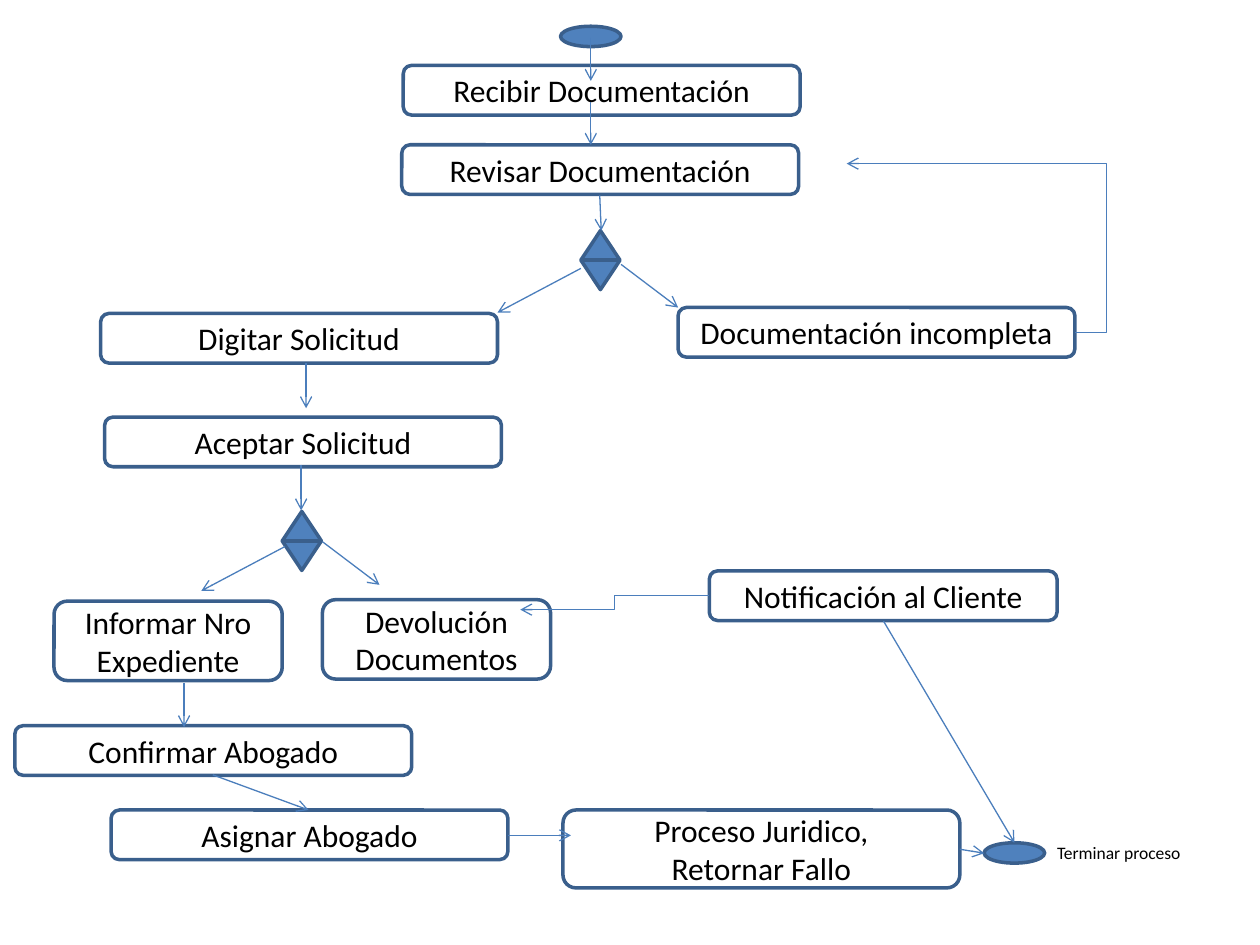
from dataclasses import dataclass

from lxml import etree
from pptx import Presentation
from pptx.dml.color import RGBColor
from pptx.enum.shapes import MSO_CONNECTOR, MSO_SHAPE
from pptx.enum.text import MSO_ANCHOR, PP_ALIGN
from pptx.oxml.ns import qn
from pptx.util import Cm, Pt

STEP = MSO_SHAPE.ROUNDED_RECTANGLE
DECISION = MSO_SHAPE.FLOWCHART_SORT
TERMINAL = MSO_SHAPE.OVAL
STRAIGHT = MSO_CONNECTOR.STRAIGHT
ELBOW = MSO_CONNECTOR.ELBOW
MIDDLE = MSO_ANCHOR.MIDDLE
TOP = MSO_ANCHOR.TOP
CENTER = PP_ALIGN.CENTER
LEFT = PP_ALIGN.LEFT


@dataclass(frozen=True)
class Theme:
    font: str = "Calibri"
    text: RGBColor = RGBColor(0x00, 0x00, 0x00)
    fill: RGBColor = RGBColor(0x4F, 0x81, 0xBD)
    outline: RGBColor = RGBColor(0x3A, 0x5F, 0x8C)
    flow: RGBColor = RGBColor(0x4B, 0x7E, 0xBC)
    step_size: Pt = Pt(18)
    caption_size: Pt = Pt(10)
    outline_width: Pt = Pt(2)
    flow_width: Pt = Pt(0.75)


THEME = Theme()

WIDE = (8, 1)
NARROW = (4.6, 1.6)
DIAMOND = (0.79, 1.19)
OVAL = (1.22, 0.41)

STEPS = [
    ("Recibir Documentación", (8.13, 1.32), WIDE),
    ("Revisar Documentación", (8.1, 2.92), WIDE),
    ("Digitar Solicitud", (2.03, 6.32), WIDE),
    ("Documentación incompleta", (13.67, 6.2), WIDE),
    ("Aceptar Solicitud", (2.11, 8.41), WIDE),
    ("Informar Nro\vExpediente", (1.09, 12.12), NARROW),
    ("Devolución Documentos", (6.5, 12.09), NARROW),
    ("Notificación al Cliente", (14.3, 11.51), (7.01, 1)),
    ("Confirmar Abogado", (0.3, 14.63), WIDE),
    ("Asignar Abogado", (2.24, 16.33), WIDE),
    ("Proceso Juridico,\vRetornar Fallo", (11.35, 16.33), (8, 1.57)),
]

SYMBOLS = [
    (TERMINAL, (11.3, 0.53), OVAL),
    (DECISION, (11.71, 4.65), DIAMOND),
    (DECISION, (5.69, 10.31), DIAMOND),
    (TERMINAL, (19.84, 16.99), OVAL),
]

FLOWS = [
    ((11.91, 0.76), (11.91, 1.63)),
    ((11.91, 2.06), (11.91, 2.92)),
    ((12.09, 3.94), (12.12, 4.65)),
    ((11.71, 5.41), (10.03, 6.3)),
    ((12.52, 5.33), (13.67, 6.2)),
    ((6.17, 7.32), (6.17, 8.23)),
    ((6.07, 9.37), (6.07, 10.29)),
    ((5.74, 11.02), (4.06, 11.91)),
    ((6.5, 10.92), (7.65, 11.79)),
    ((3.71, 13.77), (3.71, 14.66)),
    ((4.29, 15.62), (6.22, 16.33)),
    ((10.24, 16.84), (11.51, 16.84)),
    ((17.81, 12.52), (20.45, 16.99)),
    ((19.35, 17.12), (19.84, 17.2)),
]

BENT_FLOWS = [
    ((21.67, 6.71), (17.07, 3.3), -0.14),
    ((14.3, 12.01), (10.49, 12.29), 0.5),
]


def apply_format(target, values):
    for attribute, value in values.items():
        setattr(target, attribute, value)


def lengths(*values):
    return [Cm(value) for value in values]


def write_text(owner, wording, size, alignment, anchor):
    frame = owner.text_frame
    apply_format(frame, {"word_wrap": True, "vertical_anchor": anchor})
    paragraph = frame.paragraphs[0]
    paragraph.text = wording
    paragraph.alignment = alignment
    font_format = {"name": THEME.font, "size": size}
    for run in paragraph.runs:
        apply_format(run.font, font_format)
        run.font.color.rgb = THEME.text


def add_outlined(slide, kind, place, extent):
    outlined = slide.shapes.add_shape(kind, *lengths(*place, *extent))
    outlined.shadow.inherit = False
    outlined.line.color.rgb = THEME.outline
    outlined.line.width = THEME.outline_width
    return outlined


def add_step(slide, wording, place, extent):
    step = add_outlined(slide, STEP, place, extent)
    step.fill.background()
    write_text(step, wording, THEME.step_size, CENTER, MIDDLE)


def add_symbol(slide, kind, place, extent):
    symbol = add_outlined(slide, kind, place, extent)
    symbol.fill.solid()
    symbol.fill.fore_color.rgb = THEME.fill


def add_flow(slide, start, end, bend=None):
    route = STRAIGHT if bend is None else ELBOW
    flow = slide.shapes.add_connector(route, *lengths(*start, *end))
    flow.line.color.rgb = THEME.flow
    flow.line.width = THEME.flow_width
    properties = flow._element.spPr
    etree.SubElement(properties.find(qn("a:ln")), qn("a:tailEnd"), type="arrow")
    etree.SubElement(properties, qn("a:effectLst"))
    if bend is not None:
        guides = properties.find(qn("a:prstGeom")).find(qn("a:avLst"))
        etree.SubElement(
            guides, qn("a:gd"), name="adj1", fmla=f"val {round(bend * 100000)}"
        )


def add_caption(slide, wording, place, extent):
    caption = slide.shapes.add_textbox(*lengths(*place, *extent))
    write_text(caption, wording, THEME.caption_size, LEFT, TOP)


def main():
    presentation = Presentation()
    apply_format(
        presentation, {"slide_width": Cm(25.4), "slide_height": Cm(19.05)}
    )
    slide = presentation.slides.add_slide(presentation.slide_layouts[6])
    for step in STEPS:
        add_step(slide, *step)
    for symbol in SYMBOLS:
        add_symbol(slide, *symbol)
    for flow in FLOWS + BENT_FLOWS:
        add_flow(slide, *flow)
    add_caption(slide, "Terminar proceso", (21.06, 16.84), (4.93, 0.69))
    presentation.save("out.pptx")


if __name__ == "__main__":
    main()
